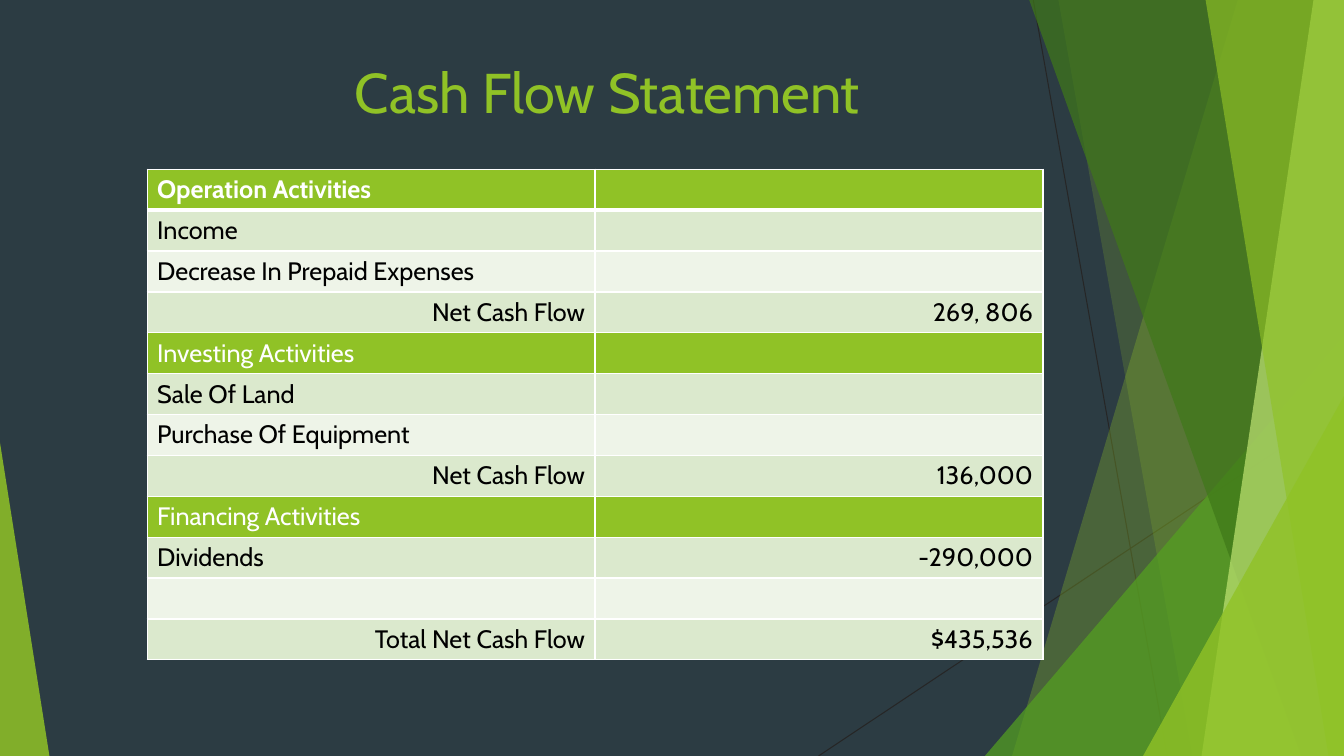
import pptx
import pptx.util
import pptx.dml.color
import pptx.enum.shapes
import pptx.enum.text
import pptx.oxml
import pptx.oxml.ns

FONT = "Cabin"
GREEN, WHITE, BLACK = "90C226", "FFFFFF", "000000"
LIGHT, PALE = "DBE9CD", "EEF4E8"
DARK, LINE = "2C3C43", "262626"
ALIGN = pptx.enum.text.PP_ALIGN

# Top and bottom left corners, in percent; each pane runs to the right edge
# Wedges: left, top, width in percent and the place of the peak
DECOR = [
    ("pane", (92.1, 75.3), GREEN, 30),
    ("pane", (78.75, 88.73), GREEN, 20),
    ("wedge", (73.28, 44.4, 26.72, 1), "54A021", 72),
    ("pane", (76.58, 96.83), "3F7819", 70),
    ("pane", (97.73, 89.4), "C0E474", 70),
    ("pane", (89.7, 98.85), GREEN, 65),
    ("wedge", (85.05, 52.4, 14.95, 1), GREEN, 80),
    ("wedge", (0, 58.53, 3.68, 0), GREEN, 85),
]
RAYS = [(76.88, 0, 86.85, 100), (100, 53.73, 60.9, 100)]

ROWS = [
    ("Operation Activities", ""),
    ("Income", ""),
    ("Decrease In Prepaid Expenses", ""),
    ("Net Cash Flow", "269, 806"),
    ("Investing Activities", ""),
    ("Sale Of Land", ""),
    ("Purchase Of Equipment", ""),
    ("Net Cash Flow", "136,000"),
    ("Financing Activities", ""),
    ("Dividends", "-290,000"),
    ("", ""),
    ("Total Net Cash Flow", "$435,536"),
]


def color(code):
    return pptx.dml.color.RGBColor.from_string(code)


def part(box, x, y, wide, high):
    """Give the part of a box that lies at these percentages."""
    left, top, width, height = box
    return (int(left + width * x / 100), int(top + height * y / 100),
            int(width * wide / 100), int(height * high / 100))


def style(para, size, code, bold=False):
    for run in para.runs:
        run.font.name = FONT
        run.font.size = pptx.util.Pt(size)
        run.font.bold = bold
        run.font.color.rgb = color(code)


def paint(shape, code, alpha):
    shape.shadow.inherit = False
    shape.line.fill.background()
    shape.fill.solid()
    shape.fill.fore_color.rgb = color(code)
    tint = shape.fill._xPr.find(".//" + pptx.oxml.ns.qn("a:srgbClr"))
    pptx.oxml.ns.qn("a:alpha")
    node = tint.makeelement(pptx.oxml.ns.qn("a:alpha"), {"val": str(alpha * 1000)})
    tint.append(node)


def add_decor(slide, box):
    # Thin rays
    for x1, y1, x2, y2 in RAYS:
        start, end = part(box, x1, y1, 0, 0), part(box, x2, y2, 0, 0)
        ray = slide.shapes.add_connector(
            pptx.enum.shapes.MSO_CONNECTOR.STRAIGHT, *start[:2], *end[:2])
        ray.line.color.rgb = color(LINE)
        ray.line.width = pptx.util.Pt(0.75)
        props = ray._element.spPr
        props.append(props.makeelement(pptx.oxml.ns.qn("a:effectLst"), {}))

    # Clear green panes and wedges
    for kind, place, code, alpha in DECOR:
        if kind == "pane":
            high, low = place
            dots = [part(box, x, y, 0, 0)[:2]
                    for x, y in ((high, 0), (100, 0), (100, 100), (low, 100))]
            build = slide.shapes.build_freeform(*dots[0])
            build.add_line_segments(dots[1:], close=True)
            shape = build.convert_to_shape()
        else:
            x, y, wide, peak = place
            shape = slide.shapes.add_shape(
                pptx.enum.shapes.MSO_SHAPE.ISOSCELES_TRIANGLE,
                *part(box, x, y, wide, 100 - y))
            shape.adjustments[0] = peak
        paint(shape, code, alpha)


def add_title(slide, box):
    title = slide.shapes.title
    title.left, title.top, title.width, title.height = box
    frame = title.text_frame
    frame.text = "Cash Flow Statement"
    frame.word_wrap = False
    frame.vertical_anchor = pptx.enum.text.MSO_ANCHOR.TOP
    frame.paragraphs[0].alignment = ALIGN.LEFT
    style(frame.paragraphs[0], 40, GREEN)
    # Bring the title in front of the decor
    slide.shapes._spTree.append(title._element)


def edge(cell, first, second):
    """Draw white cell borders; first and second rows share a thick one."""
    props = cell._tc.get_or_add_tcPr()
    for spot, side in enumerate("LRTB"):
        thick = (first and side == "B") or (second and side == "T")
        width = pptx.util.Pt(3 if thick else 1)
        props.insert(spot, pptx.oxml.parse_xml(
            f'<a:ln{side} {pptx.oxml.ns.nsdecls("a")} w="{width}"><a:solidFill>'
            f'<a:srgbClr val="{WHITE}"/></a:solidFill></a:ln{side}>'))


def add_sheet(slide, box):
    table = slide.shapes.add_table(len(ROWS), 2, *box).table
    table.first_row = table.horz_banding = False
    for i, row in enumerate(ROWS):
        # Each section is a heading followed by three banded rows
        head = i % 4 == 0
        fill = (GREEN, LIGHT, PALE, LIGHT)[i % 4]
        for j, text in enumerate(row):
            cell = table.cell(i, j)
            cell.fill.solid()
            cell.fill.fore_color.rgb = color(fill)
            edge(cell, i == 0, i == 1)
            if text:
                cell.text_frame.text = text
                para = cell.text_frame.paragraphs[0]
                right = j == 1 or text.endswith("Net Cash Flow")
                para.alignment = ALIGN.RIGHT if right else ALIGN.LEFT
                style(para, 18, WHITE if head else BLACK, bold=i == 0)


def main():
    deck = pptx.Presentation()
    deck.slide_width = pptx.util.Inches(13.33)
    deck.slide_height = pptx.util.Inches(7.5)
    slide = deck.slides.add_slide(deck.slide_layouts[5])
    slide.background.fill.solid()
    slide.background.fill.fore_color.rgb = color(DARK)
    page = (0, 0, deck.slide_width, deck.slide_height)
    add_decor(slide, page)
    add_title(slide, part(page, 25.65, 6.93, 41.25, 10.27))
    add_sheet(slide, part(page, 10.95, 22.4, 66.65, 64.93))
    deck.save("out.pptx")


if __name__ == "__main__":
    main()
